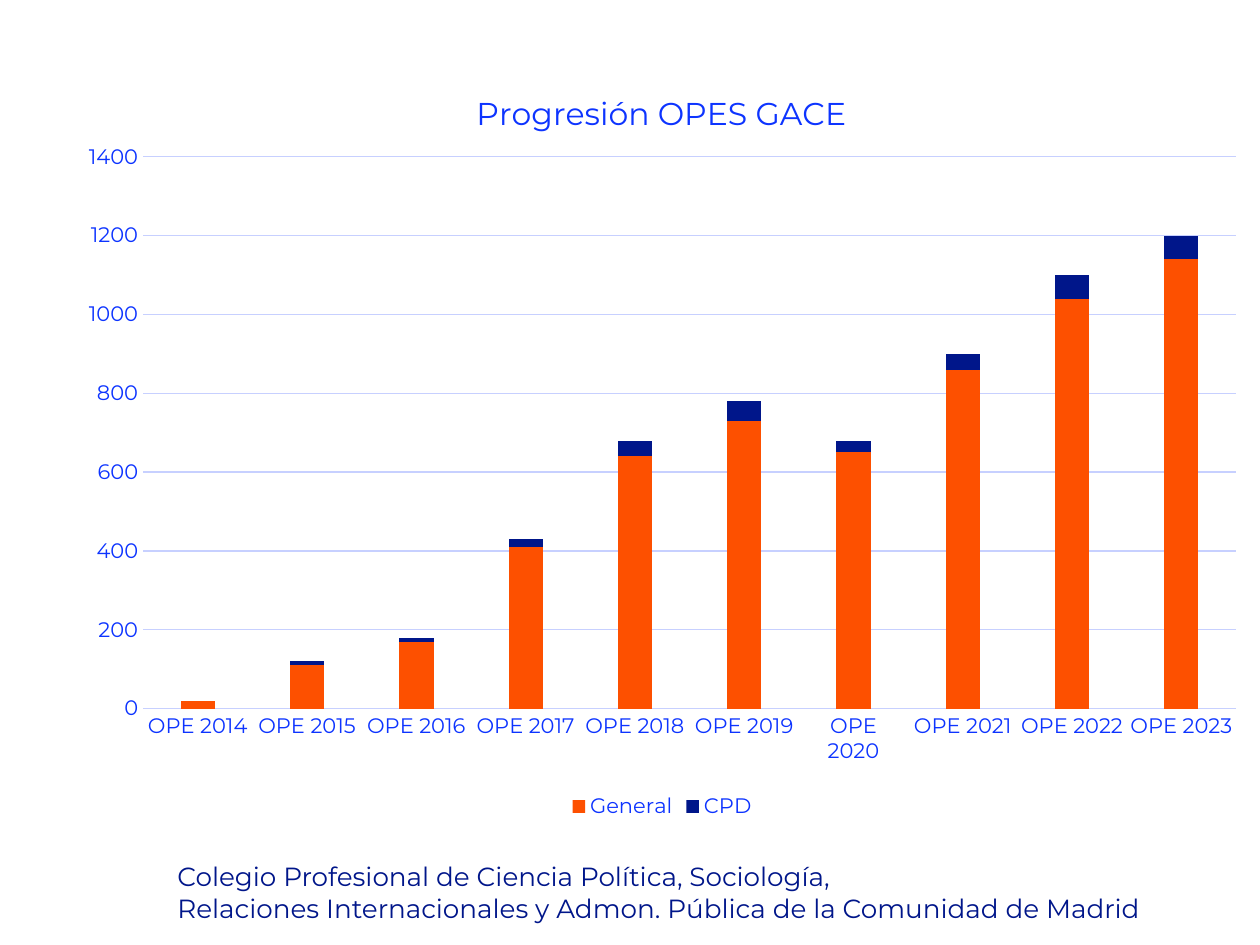
"""Build the slide with the stacked column chart of GACE public job offers."""
from pptx import Presentation
from pptx.chart.data import CategoryChartData
from pptx.dml.color import RGBColor
from pptx.enum.chart import XL_CHART_TYPE as Chart, XL_LEGEND_POSITION as Legend, XL_TICK_MARK as Tick
from pptx.oxml import parse_xml
from pptx.oxml.ns import nsdecls, qn
from pptx.util import Inches, Pt

FONT = "Montserrat"
COLORS = {"navy": "00168A", "blue": "0D34FF", "orange": "FD5000", "grid": "C7D0FF"}
TITLE = "Progresión OPES GACE"
YEARS = range(2014, 2024)
SERIES = [
    ("General", "orange", (20, 110, 170, 410, 640, 730, 650, 860, 1040, 1140)),
    ("CPD", "navy", (0, 10, 10, 20, 40, 50, 30, 40, 60, 60)),
]
FOOTER = [
    "Colegio Profesional de Ciencia Política, Sociología,",
    "Relaciones Internacionales y Admon. Pública de la Comunidad de Madrid",
]
CHART_BOX = (0.51, 0.44, 9.49, 6.1)
FOOTER_BOX = (1.31, 6.73, 8.46, 0.77)
TITLE_SHARES = {"x": 0.34, "y": 0.04}
PLOT_SHARES = {"x": 0.066, "y": 0.132, "w": 0.914, "h": 0.718}


def rgb(name):
    return RGBColor.from_string(COLORS[name])


def style(font, size, color):
    font.name, font.size, font.bold = FONT, Pt(size), False
    font.color.rgb = rgb(color)


def style_line(line, color):
    line.color.rgb = rgb(color)
    line.width = Pt(0.75)


def place(element, index, shares):
    for old in element.findall(qn("c:layout")):
        element.remove(old)
    target = '<c:layoutTarget val="inner"/>' if "w" in shares else ""
    modes = "".join(f'<c:{k}Mode val="edge"/>' for k in shares if k in "xy")
    values = "".join(f'<c:{k} val="{v}"/>' for k, v in shares.items())
    element.insert(index, parse_xml(
        f'<c:layout {nsdecls("c")}><c:manualLayout>{target}{modes}{values}'
        "</c:manualLayout></c:layout>"))


def add_offers_chart(s):
    data = CategoryChartData()
    data.categories = [f"OPE {year}" for year in YEARS]
    for name, _, values in SERIES:
        data.add_series(name, values)
    chart = s.shapes.add_chart(Chart.COLUMN_STACKED, *map(Inches, CHART_BOX), data).chart
    style(chart.font, 10, "navy")

    r = chart.chart_title.text_frame.paragraphs[0].add_run()
    r.text = TITLE
    style(r.font, 18, "blue")
    chart.chart_title.include_in_layout = False
    place(chart.chart_title._element, 1, TITLE_SHARES)
    place(chart._chartSpace.chart.plotArea, 0, PLOT_SHARES)

    plot = chart.plots[0]
    plot.gap_width, plot.overlap, plot.vary_by_categories = 219, 100, False
    for series, (_, color, _) in zip(plot.series, SERIES):
        series.format.fill.solid()
        series.format.fill.fore_color.rgb = rgb(color)

    cats, vals = chart.category_axis, chart.value_axis
    for axis in (cats, vals):
        axis.major_tick_mark = axis.minor_tick_mark = Tick.NONE
        style(axis.tick_labels.font, 12, "blue")
    style_line(cats.format.line, "grid")
    vals.format.line.fill.background()
    vals.minimum_scale, vals.maximum_scale, vals.major_unit = 0, 1400, 200
    style_line(vals.major_gridlines.format.line, "grid")

    chart.has_legend = True
    chart.legend.position = Legend.BOTTOM
    chart.legend.include_in_layout = False
    style(chart.legend.font, 12, "blue")


def add_footer(s):
    tf = s.shapes.add_textbox(*map(Inches, FOOTER_BOX)).text_frame
    tf.word_wrap = True
    tf.margin_left = tf.margin_right = tf.margin_top = tf.margin_bottom = Inches(0.1)
    for i, line in enumerate(FOOTER):
        p = tf.add_paragraph() if i else tf.paragraphs[0]
        r = p.add_run()
        r.text = line
        style(r.font, 15, "navy")


def main():
    prs = Presentation()
    prs.slide_width, prs.slide_height = Inches(10), Inches(7.5)
    s = prs.slides.add_slide(prs.slide_layouts[6])
    add_footer(s)
    add_offers_chart(s)
    prs.save("out.pptx")


if __name__ == "__main__":
    main()
